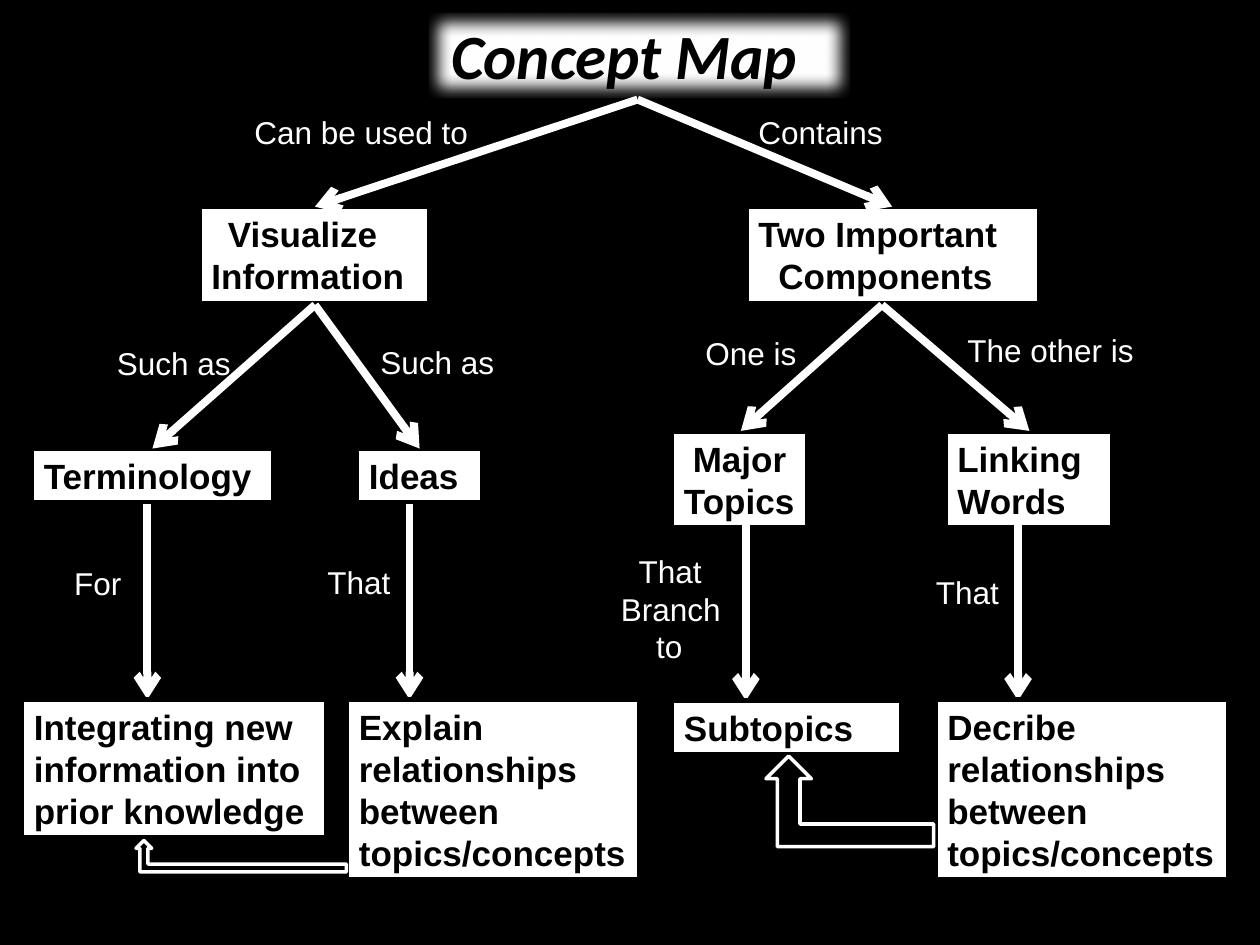
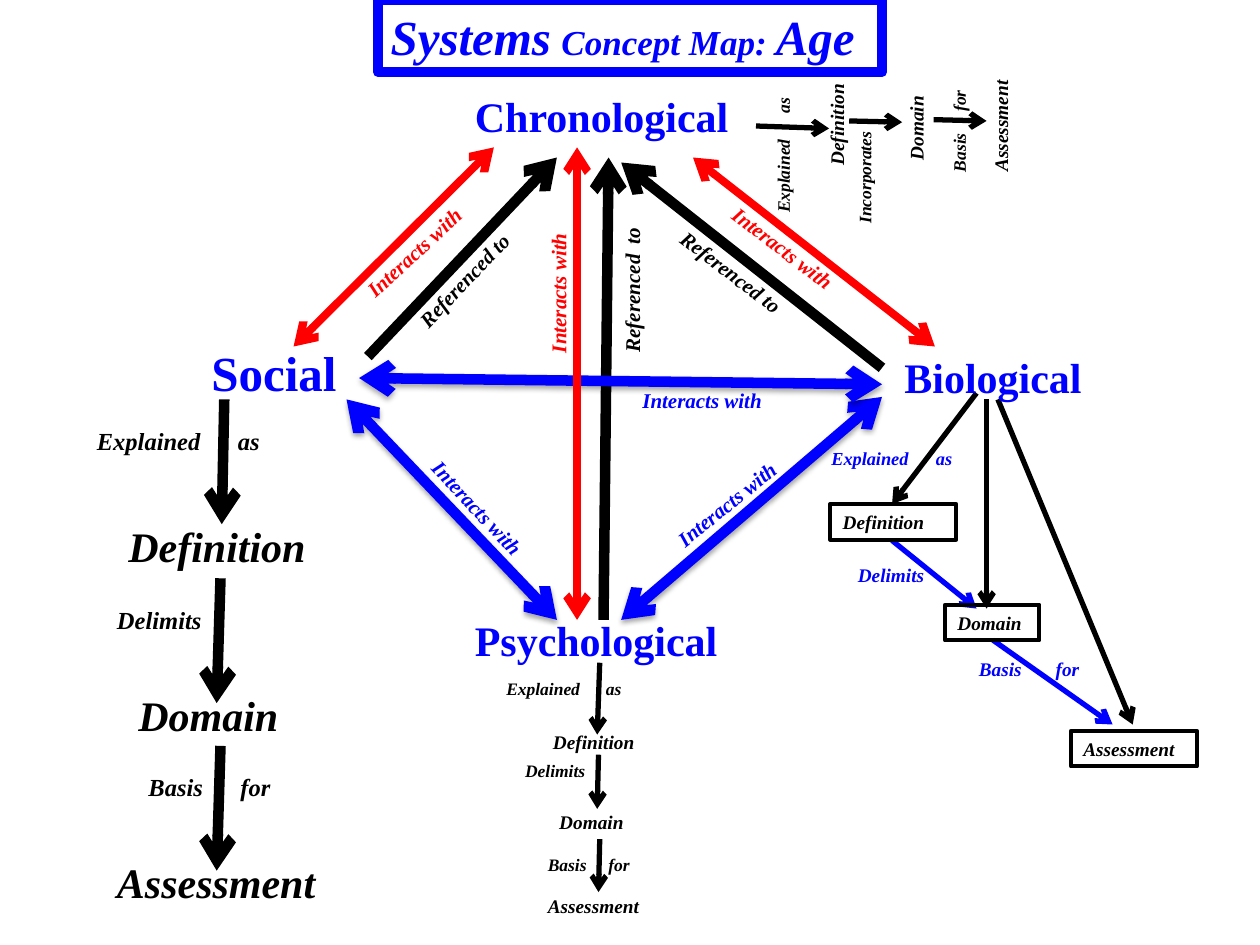
"""Build two concept map slides: one on concept maps, one on systems of age."""
from dataclasses import dataclass

from lxml.etree import SubElement
from pptx import Presentation
from pptx.dml.color import RGBColor
from pptx.enum.shapes import MSO_CONNECTOR, MSO_SHAPE
from pptx.enum.text import MSO_ANCHOR, MSO_AUTO_SIZE, PP_ALIGN
from pptx.oxml.ns import qn
from pptx.util import Cm, Pt


@dataclass(frozen=True)
class Theme:
    """Colours, fonts and type sizes of both slides."""
    black: str = "000000"
    white: str = "FFFFFF"
    blue: str = "0000FF"
    red: str = "FF0000"
    display: str = "Calibri"
    sans: str = "Arial"
    serif: str = "Times New Roman"
    title: int = 36
    topic: int = 28
    heading: int = 24
    node: int = 20
    link: int = 18
    step: int = 14
    relation: int = 12
    small: int = 11
    note: float = 10.5
    tiny: int = 10


T = Theme()


@dataclass(frozen=True)
class Label:
    """A text box, framed when it has a fill or an edge; x, y, w in inches."""
    text: str
    x: float
    y: float
    w: float
    size: float
    color: str = T.black
    font: str = T.serif
    bold: bool = True
    italic: bool = True
    rot: float = 0
    tab: float = 0
    indents: tuple = ()
    rows: int = 0
    fill: str = ""
    edge: str = ""
    edge_width: float = 2.25

    @property
    def h(self) -> float:
        """Height that holds all rows of text."""
        return 0.1 + (self.rows or self.text.count("\n") + 1) * self.size / 60


@dataclass(frozen=True)
class Arrow:
    """A straight arrow between two points in inches."""
    x1: float
    y1: float
    x2: float
    y2: float
    color: str = T.black
    width: float = 3
    both: bool = False
    shadow: bool = False


def inches(value: float) -> int:
    """Turn inches of the map grid into a length."""
    return Cm(2.54 * value)


def rgb(color: str) -> RGBColor:
    """Turn a hex string into a colour."""
    return RGBColor.from_string(color)


def add_text(p, text: str, *, size: float, color: str, font: str,
             bold: bool = True, italic: bool = False,
             indent: float = 0, tab: float = 0) -> None:
    """Add a formatted run to a paragraph, with an optional indent and tab stop."""
    p.alignment = PP_ALIGN.LEFT
    pPr = p._p.get_or_add_pPr()
    if indent:
        pPr.set("marL", str(inches(indent)))
    if tab:
        stops = SubElement(pPr, qn("a:tabLst"))
        SubElement(stops, qn("a:tab"), pos=str(inches(tab)), algn="l")
    r = p.add_run()
    r.text = text
    r.font.size, r.font.name = Pt(size), font
    r.font.bold, r.font.italic = bold, italic
    r.font.color.rgb = rgb(color)


def set_frame(sp, fill: str, edge: str, width: float) -> None:
    """Set the fill, edge and text frame of a shape, without a shadow."""
    sp.shadow.inherit = False
    if fill:
        sp.fill.solid()
        sp.fill.fore_color.rgb = rgb(fill)
    else:
        sp.fill.background()
    sp.line.color.rgb = rgb(edge)
    sp.line.width = Pt(width)
    tf = sp.text_frame
    tf.word_wrap, tf.auto_size = True, MSO_AUTO_SIZE.NONE
    tf.vertical_anchor = MSO_ANCHOR.TOP


def draw_label(s, label: Label) -> None:
    """Draw a label, one paragraph per line."""
    box = [inches(v) for v in (label.x, label.y, label.w, label.h)]
    if label.edge:
        sp = s.shapes.add_shape(MSO_SHAPE.RECTANGLE, *box)
        set_frame(sp, label.fill, label.edge, label.edge_width)
    else:
        sp = s.shapes.add_textbox(*box)
        sp.text_frame.word_wrap = True
    sp.rotation = label.rot
    tf = sp.text_frame
    for i, line in enumerate(label.text.split("\n")):
        p = tf.add_paragraph() if i else tf.paragraphs[0]
        add_text(p, line, size=label.size, color=label.color, font=label.font,
                 bold=label.bold, italic=label.italic, tab=label.tab,
                 indent=label.indents[i] if label.indents else 0)


def draw_arrow(s, arrow: Arrow) -> None:
    """Draw an arrow with one or two heads."""
    ends = (arrow.x1, arrow.y1, arrow.x2, arrow.y2)
    cx = s.shapes.add_connector(MSO_CONNECTOR.STRAIGHT, *map(inches, ends))
    cx.line.color.rgb = rgb(arrow.color)
    cx.line.width = Pt(arrow.width)
    spPr = cx._element.spPr
    ln = spPr.find(qn("a:ln"))
    for end in ("headEnd", "tailEnd") if arrow.both else ("tailEnd",):
        SubElement(ln, qn(f"a:{end}"), type="arrow")
    effects = SubElement(spPr, qn("a:effectLst"))
    if arrow.shadow:
        shade = SubElement(effects, qn("a:outerShdw"), blurRad=str(Pt(3.1)),
                           dist=str(Pt(1.8)), dir="5400000", rotWithShape="0")
        color = SubElement(shade, qn("a:srgbClr"), val=T.black)
        SubElement(color, qn("a:alpha"), val="35000")


def draw_bent_arrow(s, x: float, y: float, w: float, h: float) -> None:
    """Draw an arrow that runs left and then up."""
    sp = s.shapes.add_shape(MSO_SHAPE.BENT_UP_ARROW, *map(inches, (x, y, w, h)))
    set_frame(sp, T.black, T.white, 2)
    sp._element.spPr.find(qn("a:xfrm")).set("flipH", "1")


def add_slide(prs, background: str, box: tuple, fill: str, edge: str, width: float):
    """Add a slide with a framed title and return both."""
    s = prs.slides.add_slide(prs.slide_layouts[5])
    s.background.fill.solid()
    s.background.fill.fore_color.rgb = rgb(background)
    title = s.shapes.title
    title.left, title.top, title.width, title.height = map(inches, box)
    set_frame(title, fill, edge, width)
    return s, title


def node(text: str, x: float, y: float, w: float, **options) -> Label:
    """A white box on the black map."""
    return Label(text, x, y, w, T.node, font=T.sans, italic=False,
                 fill=T.white, edge=T.black, edge_width=3, **options)


def link(text: str, x: float, y: float, w: float, **options) -> Label:
    """Linking words on the black map."""
    return Label(text, x, y, w, T.link, T.white, T.sans, False, False, **options)


def heading(text: str, x: float, y: float, w: float, size: int = T.heading) -> Label:
    """One of the four domains of age."""
    return Label(text, x, y, w, size, T.blue, italic=False)


def boxed(text: str, x: float, y: float, w: float) -> Label:
    """A small outlined term."""
    return Label(text, x, y, w, T.small, edge=T.black)


BRANCHES = [
    (node("Visualize\nInformation", 1.58, 1.64, 1.83, indents=(0.13, 0)),
     (5.06, 0.79, 2.5, 1.64), link("Can be used to", 1.92, 0.85, 1.92)),
    (node("Two Important\nComponents", 5.92, 1.64, 2.33, indents=(0, 0.16)),
     (5.06, 0.79, 7.08, 1.64), link("Contains", 5.92, 0.85, 1.42)),
    (node("Terminology", 0.25, 3.56, 1.92),
     (2.5, 2.42, 1.21, 3.56), link("Such as", 0.83, 2.68, 1.25)),
    (node("Ideas", 2.83, 3.56, 1),
     (2.5, 2.42, 3.33, 3.56), link("Such as", 2.92, 2.67, 1.25)),
    (node("Major\nTopics", 5.33, 3.42, 1.08, indents=(0.07, 0)),
     (7, 2.42, 5.88, 3.42), link("One is", 5.5, 2.6, 1.25)),
    (node("Linking\nWords", 7.5, 3.42, 1.33),
     (7, 2.42, 8.17, 3.42), link("The other is", 7.58, 2.58, 1.58)),
    (node("Integrating new information into prior knowledge", 0.17, 5.55, 2.42, rows=3),
     (1.17, 4, 1.17, 5.55), link("For", 0.42, 4.43, 1.25, indents=(0.07,))),
    (node("Explain\nrelationships\nbetween\ntopics/concepts", 2.75, 5.55, 2.33),
     (3.25, 4, 3.25, 5.55), link("That", 2.5, 4.42, 0.92)),
    (node("Subtopics", 5.33, 5.56, 1.83),
     (5.92, 4.17, 5.92, 5.56),
     link("That\nBranch\nto", 4.83, 4.33, 1.08, indents=(0.14, 0, 0.28))),
    (node("Decribe\nrelationships between\ntopics/concepts", 7.42, 5.55, 2.33, rows=4),
     (8.08, 4.17, 8.08, 5.56), link("That", 7.33, 4.5, 0.92)),
]

REFERENCES = [(7, 2.92, 4.93, 1.29), (4.79, 4.92, 4.83, 1.25), (2.92, 2.83, 4.42, 1.25)]
BLUE_LINKS = [(7, 3.15, 4.93, 4.92), (2.75, 3.17, 4.42, 4.92), (7, 3.05, 2.85, 3)]
RED_LINKS = [(5.5, 1.25, 7.42, 2.75), (2.33, 2.75, 3.92, 1.17), (4.58, 1.17, 4.58, 4.92)]
SOCIAL_STEPS = [(1.78, 3.17, 1.76, 4.16), (1.75, 4.59, 1.72, 5.58), (1.75, 5.92, 1.72, 6.91)]
THIN_STEPS = [
    (4.76, 5.26, 4.74, 5.83), (4.75, 5.99, 4.74, 6.42), (4.76, 6.66, 4.75, 7.08),
    (7.75, 3.12, 7.08, 4), (7.83, 3.17, 7.83, 4.83), (7.92, 3.17, 8.99, 5.75),
    (6, 1, 6.58, 1.02), (6.74, 0.96, 7.16, 0.97), (7.41, 0.95, 7.83, 0.96),
]
BLUE_STEPS = [(7.08, 4.29, 7.75, 4.83), (7.88, 5.08, 8.83, 5.75)]

AGE_ARROWS = [
    *(Arrow(*a, width=6) for a in REFERENCES),
    *(Arrow(*a, T.blue, 6, both=True, shadow=True) for a in BLUE_LINKS),
    *(Arrow(*a, width=6) for a in SOCIAL_STEPS),
    *(Arrow(*a) for a in THIN_STEPS),
    *(Arrow(*a, T.blue) for a in BLUE_STEPS),
    *(Arrow(*a, T.red, 4.5, both=True) for a in RED_LINKS),
]

AGE_LABELS = [
    heading("Chronological", 3.67, 0.67, 3.25),
    heading("Biological", 7.08, 2.74, 2.5),
    heading("Psychological", 3.67, 4.83, 3.17),
    heading("Social", 1.58, 2.67, 1.27, T.topic),
    Label("Referenced to", 5.22, 2.04, 1.25, T.relation, rot=37.3),
    Label("Referenced\tto", 4.36, 2.09, 1.31, T.relation, rot=270, tab=0.86),
    Label("Referenced to", 3.1, 2.05, 1.21, T.relation, rot=313.6),
    *(Label("Interacts with", x, y, w, T.relation, color, rot=rot)
      for x, y, w, color, rot in [
          (5.19, 3.84, 1.18, T.blue, 321.1), (3.19, 3.94, 1.31, T.blue, 46.8),
          (5, 3.03, 1.19, T.blue, 0), (5.64, 1.82, 1.15, T.red, 37.2),
          (2.7, 1.82, 1.24, T.red, 317.3), (3.81, 2.13, 1.24, T.red, 270)]),
    Label("Explained\tas", 0.67, 3.33, 1.75, T.step, tab=1.12),
    Label("Definition", 0.92, 4.08, 1.75, T.heading),
    Label("Delimits", 0.83, 4.75, 1.75, T.step),
    Label("Domain", 1, 5.42, 1.67, T.heading),
    Label("Basis\tfor", 1.08, 6.08, 1.42, T.step, tab=0.73),
    Label("Assessment", 0.83, 6.75, 2.08, T.heading),
    Label("Explained\tas", 3.92, 5.33, 1.79, T.tiny, tab=0.79),
    Label("Definition", 4.29, 5.75, 1, T.small),
    Label("Delimits", 3.83, 5.98, 0.96, T.tiny, indents=(0.24,)),
    Label("Domain", 4.34, 6.38, 1, T.small),
    Label("Basis\tfor", 4.25, 6.73, 0.9, T.tiny, tab=0.48),
    Label("Assessment", 4.25, 7.05, 1, T.small),
    Label("Explained\tas", 6.5, 3.5, 1.25, T.note, T.blue, tab=0.83),
    boxed("Definition", 6.59, 4, 1),
    Label("Delimits", 6.71, 4.42, 1.04, T.small, T.blue),
    boxed("Domain", 7.5, 4.8, 0.75),
    Label("Basis\tfor", 7.67, 5.17, 1, T.small, T.blue, tab=0.61),
    boxed("Assessment", 8.5, 5.8, 1),
    Label("Explained\tas", 5.32, 0.76, 1.79, T.tiny, rot=270, tab=0.79),
    Label("Definition", 6.14, 0.77, 1, T.small, rot=270),
    Label("Incorporates", 6.38, 1.26, 0.96, T.tiny, rot=270),
    Label("Domain", 6.77, 0.73, 1, T.small, rot=270),
    Label("Basis\tfor", 7.16, 0.88, 0.9, T.tiny, rot=270, tab=0.48),
    Label("Assessment", 7.44, 0.82, 1, T.small, rot=270),
]


def build_concept_map(prs) -> None:
    """Build the black slide that explains concept maps."""
    s, title = add_slide(prs, T.black, (3.38, 0.08, 3.38, 0.71), T.white, T.black, 3)
    effects = title._element.spPr.find(qn("a:effectLst"))
    SubElement(effects, qn("a:softEdge"), rad=str(Pt(8.86)))
    add_text(title.text_frame.paragraphs[0], "Concept Map", size=T.title,
             color=T.black, font=T.display, italic=True, indent=0.1)
    for box, ends, words in BRANCHES:
        arrow = Arrow(*ends, T.white, 4.5)
        steps = [(draw_label, box), (draw_arrow, arrow)]
        for draw, item in reversed(steps) if arrow.x1 == arrow.x2 else steps:
            draw(s, item)
        draw_label(s, words)
    draw_bent_arrow(s, 6.08, 6, 1.33, 0.72)
    draw_bent_arrow(s, 1.08, 6.67, 1.67, 0.25)


def build_age_map(prs) -> None:
    """Build the white slide that maps the systems of age."""
    s, title = add_slide(prs, T.white, (3, 0, 4, 0.57), "", T.blue, 6)
    for text, size in [("Systems", T.topic), (" ", T.heading),
                       ("Concept Map: ", T.node), ("Age", T.topic)]:
        add_text(title.text_frame.paragraphs[0], text, size=size, color=T.blue,
                 font=T.serif, italic=True)
    for arrow in AGE_ARROWS:
        draw_arrow(s, arrow)
    for label in AGE_LABELS:
        draw_label(s, label)


def main() -> None:
    """Build and save the presentation."""
    prs = Presentation()
    prs.slide_width, prs.slide_height = inches(10), inches(7.5)
    build_concept_map(prs)
    build_age_map(prs)
    prs.save("out.pptx")


if __name__ == "__main__":
    main()
